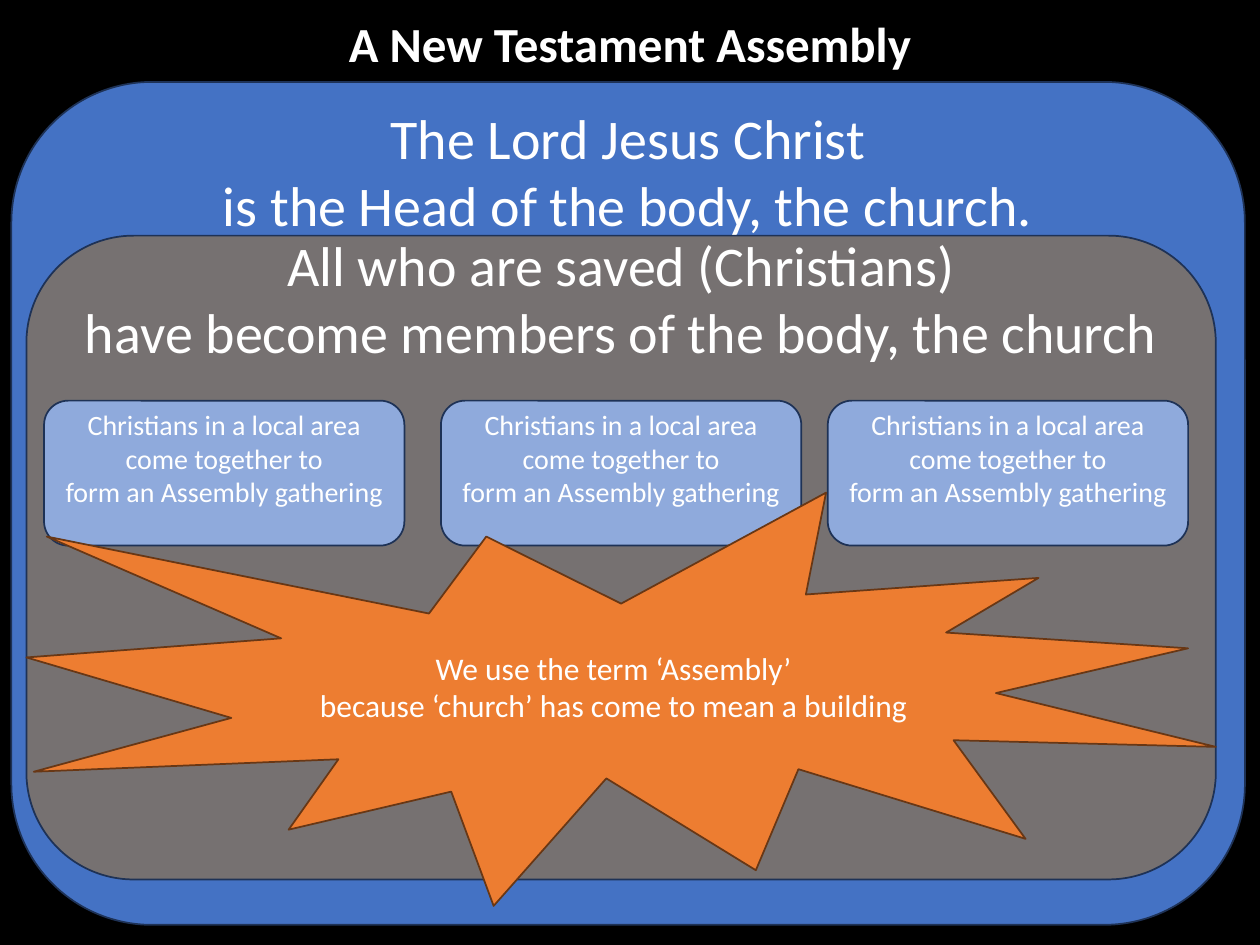
from pptx import Presentation
from pptx.dml.color import RGBColor
from pptx.enum.shapes import MSO_SHAPE as Shape
from pptx.enum.text import MSO_ANCHOR as Anchor, PP_ALIGN as Align
from pptx.util import Inches, Pt

COLORS = {
    "background": "000000",
    "text": "FFFFFF",
    "head": "4472C4",
    "body": "767171",
    "gathering": "8FAADC",
    "outline": "1E3256",
    "burst": "ED7D31",
    "burst_outline": "683715",
}
GATHERING_LINES = [
    "Christians in a local area",
    "come together to",
    "form an Assembly gathering",
]


def color(name):
    return RGBColor.from_string(COLORS[name])


def write_lines(frame, lines, size, bold=False):
    frame.word_wrap = True
    frame.text = "\n".join(lines)
    for paragraph in frame.paragraphs:
        paragraph.alignment = Align.CENTER
        for run in paragraph.runs:
            run.font.name = "Calibri"
            run.font.size = Pt(size)
            run.font.bold = bold
            run.font.color.rgb = color("text")


def add_panel(slide, preset, box, fill, outline="outline"):
    panel = slide.shapes.add_shape(preset, *map(Inches, box))
    panel.shadow.inherit = False
    panel.fill.solid()
    panel.fill.fore_color.rgb = color(fill)
    panel.line.color.rgb = color(outline)
    panel.line.width = Pt(1)
    return panel


def add_caption(slide, box, lines, size, bold=False):
    frame = slide.shapes.add_textbox(*map(Inches, box)).text_frame
    frame.margin_top = frame.margin_bottom = 0
    write_lines(frame, lines, size, bold)


def add_group(slide, box, fill, lines, drop):
    """Large rounded panel with its statement a given drop below the top edge."""
    left, top, width, _ = box
    add_panel(slide, Shape.ROUNDED_RECTANGLE, box, fill)
    add_caption(slide, (left, top + drop, width, 1.08), lines, 32)


def add_gathering(slide, box):
    gathering = add_panel(slide, Shape.ROUNDED_RECTANGLE, box, "gathering")
    frame = gathering.text_frame
    frame.vertical_anchor = Anchor.TOP
    frame.margin_top = 0
    write_lines(frame, GATHERING_LINES, 16)


def add_burst(slide, box, lines):
    burst = add_panel(slide, Shape.EXPLOSION1, box, "burst", "burst_outline")
    burst.text_frame.vertical_anchor = Anchor.MIDDLE
    write_lines(burst.text_frame, lines, 18)


def main():
    deck = Presentation()
    deck.slide_width, deck.slide_height = Inches(10), Inches(7.5)
    slide = deck.slides.add_slide(deck.slide_layouts[6])
    slide.background.fill.solid()
    slide.background.fill.fore_color.rgb = color("background")

    add_group(slide, (0.09, 0.65, 9.79, 6.69), "head",
              ["The Lord Jesus Christ", "is the Head of the body, the church."], 0.17)
    add_group(slide, (0.21, 1.87, 9.44, 5.11), "body",
              ["All who are saved (Christians)",
               "have become members of the body, the church"], -0.04)
    add_caption(slide, (0, 0.11, 10, 0.52), ["A New Testament Assembly"], 28, bold=True)
    for left in (0.35, 3.5, 6.57):
        add_gathering(slide, (left, 3.18, 2.86, 1.15))
    add_burst(slide, (0.21, 3.91, 9.44, 3.28),
              ["We use the term ‘Assembly’",
               "because ‘church’ has come to mean a building"])
    deck.save("out.pptx")


if __name__ == "__main__":
    main()
